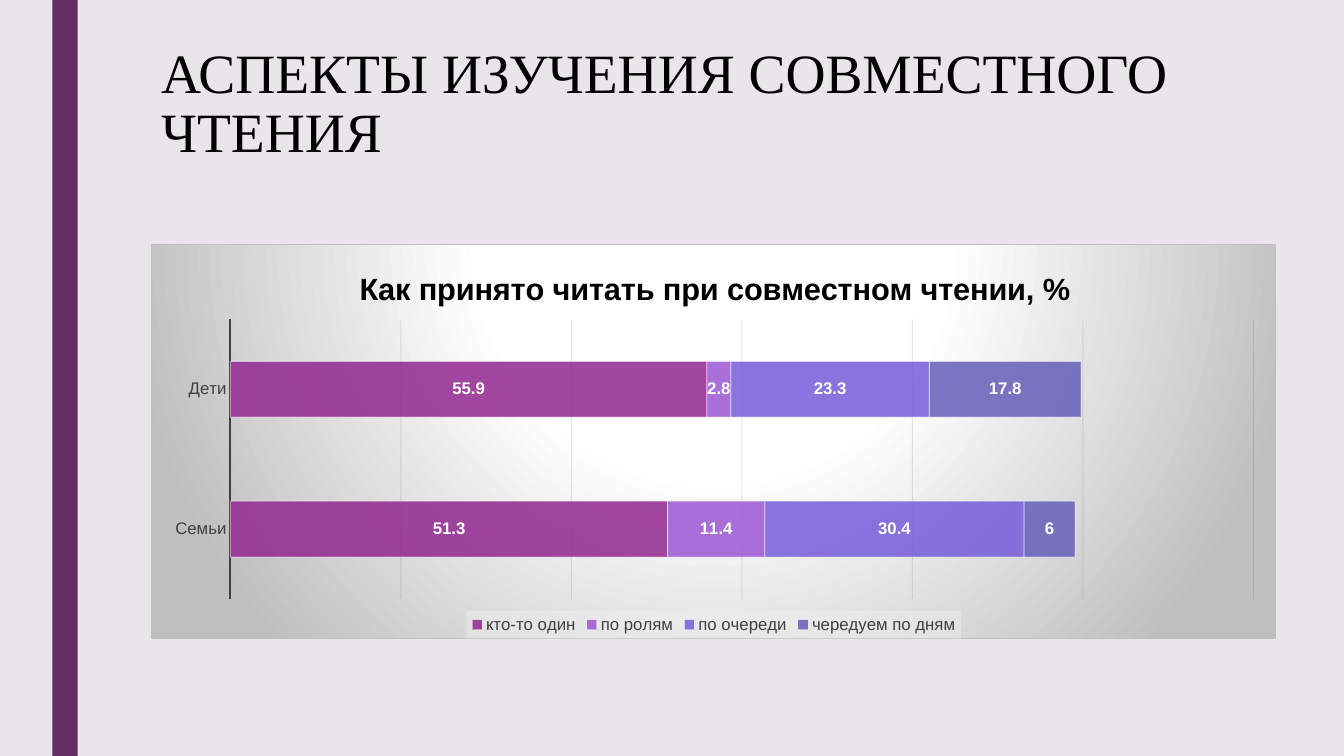
import lxml.etree
import pptx
import pptx.chart.data
import pptx.dml.color
import pptx.enum.chart
import pptx.enum.shapes
import pptx.enum.text
import pptx.oxml
import pptx.oxml.ns
import pptx.util

Inches, Pt = pptx.util.Inches, pptx.util.Pt
qn = pptx.oxml.ns.qn
NS = pptx.oxml.ns.nsdecls("c", "a")

CATEGORIES = ["Семьи", "Дети"]
SERIES = [
    ("кто-то один", (51.3, 55.9), "92278F"),
    ("по ролям", (11.4, 2.8), "9B57D3"),
    ("по очереди", (30.4, 23.3), "755DD9"),
    ("чередуем по дням", (6, 17.8), "665EB8"),
]
FRAME = f"""<c:spPr {NS}><a:gradFill><a:gsLst>
<a:gs pos="0"><a:srgbClr val="FFFFFF"/></a:gs>
<a:gs pos="39000"><a:srgbClr val="FFFFFF"/></a:gs>
<a:gs pos="100000"><a:srgbClr val="BFBFBF"/></a:gs></a:gsLst>
<a:path path="circle"><a:fillToRect l="50000" t="-80000" r="50000" b="180000"/></a:path>
</a:gradFill><a:ln w="9525"><a:solidFill><a:srgbClr val="BFBFBF"/></a:solidFill></a:ln></c:spPr>"""
LEGEND_FILL = f"""<c:spPr {NS}><a:solidFill><a:srgbClr val="F2F2F2">
<a:alpha val="39000"/></a:srgbClr></a:solidFill></c:spPr>"""


def rgb(value):
    """Return a colour from a hex string."""
    return pptx.dml.color.RGBColor.from_string(value)


def style_font(font, name, size, color, bold=False):
    """Set the face, size, colour and weight of a font."""
    font.name, font.size, font.bold = name, Pt(size), bold
    font.color.rgb = rgb(color)


def set_alpha(fill_parent, percent):
    """Make the first solid colour under an element translucent."""
    clr = next(fill_parent.iter(qn("a:srgbClr")))
    lxml.etree.SubElement(clr, qn("a:alpha")).set("val", str(percent * 1000))


def style_line(line, color, width, percent=100):
    """Set the colour, width and opacity of a line."""
    line.color.rgb = rgb(color)
    line.width = Pt(width)
    return percent


def set_layout(element, index, x, y, w=None, h=None, inner=False):
    """Place a chart part by fractions of the chart area."""
    for old in element.findall(qn("c:layout")):
        element.remove(old)
    target = '<c:layoutTarget val="inner"/>' if inner else ""
    modes = '<c:xMode val="edge"/><c:yMode val="edge"/>'
    sizes = "".join(f'<c:{tag} val="{v}"/>' for tag, v in zip("xywh", (x, y, w, h)) if v is not None)
    layout = f"<c:layout {NS}><c:manualLayout>{target}{modes}{sizes}</c:manualLayout></c:layout>"
    element.insert(index, pptx.oxml.parse_xml(layout))


def add_stripe(slide, left, top, width, height):
    """Draw the vertical accent stripe."""
    sp = slide.shapes.add_shape(pptx.enum.shapes.MSO_SHAPE.RECTANGLE, left, top, width, height)
    sp.shadow.inherit = False
    sp.fill.solid()
    sp.fill.fore_color.rgb = rgb("632E62")
    sp.line.fill.background()


def add_title(slide, left, top, width, height):
    """Write the slide heading."""
    tf = slide.shapes.add_textbox(left, top, width, height).text_frame
    tf.word_wrap = True
    tf.vertical_anchor = pptx.enum.text.MSO_ANCHOR.TOP
    tf.text = "АСПЕКТЫ ИЗУЧЕНИЯ СОВМЕСТНОГО ЧТЕНИЯ"
    p = tf.paragraphs[0]
    p.line_spacing = 0.89
    style_font(p.runs[0].font, "Times New Roman", 39.6, "000000")


def style_axes(chart):
    """Format the category axis and the hidden value axis."""
    cat, val = chart.category_axis, chart.value_axis
    cat.major_tick_mark = pptx.enum.chart.XL_TICK_MARK.NONE
    style_font(cat.tick_labels.font, "Arial", 12, "404040")
    style_line(cat.format.line, "404040", 1.5)
    val.visible = False
    val.minimum_scale, val.maximum_scale, val.major_unit = 0, 120, 20
    val.has_major_gridlines = True
    line = val.major_gridlines.format.line
    style_line(line, "0D0D0D", 0.75)
    set_alpha(val._element.find(qn("c:majorGridlines")), 10)


def style_series(plot):
    """Colour the stacked bars and label them."""
    plot.gap_width, plot.overlap, plot.vary_by_categories = 150, 100, False
    for series, (_, _, color) in zip(plot.series, SERIES):
        series.format.fill.solid()
        series.format.fill.fore_color.rgb = rgb(color)
        style_line(series.format.line, "FFFFFF", 0.75)
        sp_pr = series._element.find(qn("c:spPr"))
        set_alpha(sp_pr.find(qn("a:solidFill")), 85)
        set_alpha(sp_pr.find(qn("a:ln")), 50)
        labels = series.data_labels
        labels.show_value = True
        labels.position = pptx.enum.chart.XL_LABEL_POSITION.CENTER
        style_font(labels.font, "Arial", 12, "FFFFFF", bold=True)


def add_reading_chart(slide, left, top, width, height):
    """Add the stacked bar chart with its title and legend."""
    data = pptx.chart.data.CategoryChartData()
    data.categories = CATEGORIES
    for name, values, _ in SERIES:
        data.add_series(name, values)
    kind = pptx.enum.chart.XL_CHART_TYPE.BAR_STACKED
    chart = slide.shapes.add_chart(kind, left, top, width, height, data).chart
    style_font(chart.font, "Arial", 10, "000000")
    style_axes(chart)
    style_series(chart.plots[0])

    chart.has_title = True
    tf = chart.chart_title.text_frame
    tf.text = "Как принято читать при совместном чтении, %"
    style_font(tf.paragraphs[0].runs[0].font, "Arial", 22, "000000", bold=True)
    chart.chart_title.include_in_layout = False
    set_layout(chart.chart_title._element, 1, 0.18, 0.05)

    chart.has_legend = True
    legend = chart.legend
    legend.position = pptx.enum.chart.XL_LEGEND_POSITION.BOTTOM
    legend.include_in_layout = False
    style_font(legend.font, "Arial", 12, "404040")
    set_layout(legend._element, 1, 0.28, 0.93, 0.44, 0.07)
    legend._element.find(qn("c:txPr")).addprevious(pptx.oxml.parse_xml(LEGEND_FILL))

    body = chart._chartSpace.find(qn("c:chart"))
    set_layout(body.find(qn("c:plotArea")), 0, 0.07, 0.19, 0.91, 0.71, inner=True)
    body.addnext(pptx.oxml.parse_xml(FRAME))


def main():
    """Build the slide and save it."""
    prs = pptx.Presentation()
    prs.slide_width, prs.slide_height = Inches(13.33), Inches(7.5)
    slide = prs.slides.add_slide(prs.slide_layouts[6])
    slide.background.fill.solid()
    slide.background.fill.fore_color.rgb = rgb("EAE5EB")
    add_stripe(slide, Inches(0.52), 0, Inches(0.25), prs.slide_height)
    add_title(slide, Inches(1.5), Inches(0.41), Inches(10.99), Inches(1.18))
    add_reading_chart(slide, Inches(1.5), Inches(2.42), Inches(11.16), Inches(3.92))
    prs.save("out.pptx")


if __name__ == "__main__":
    main()
